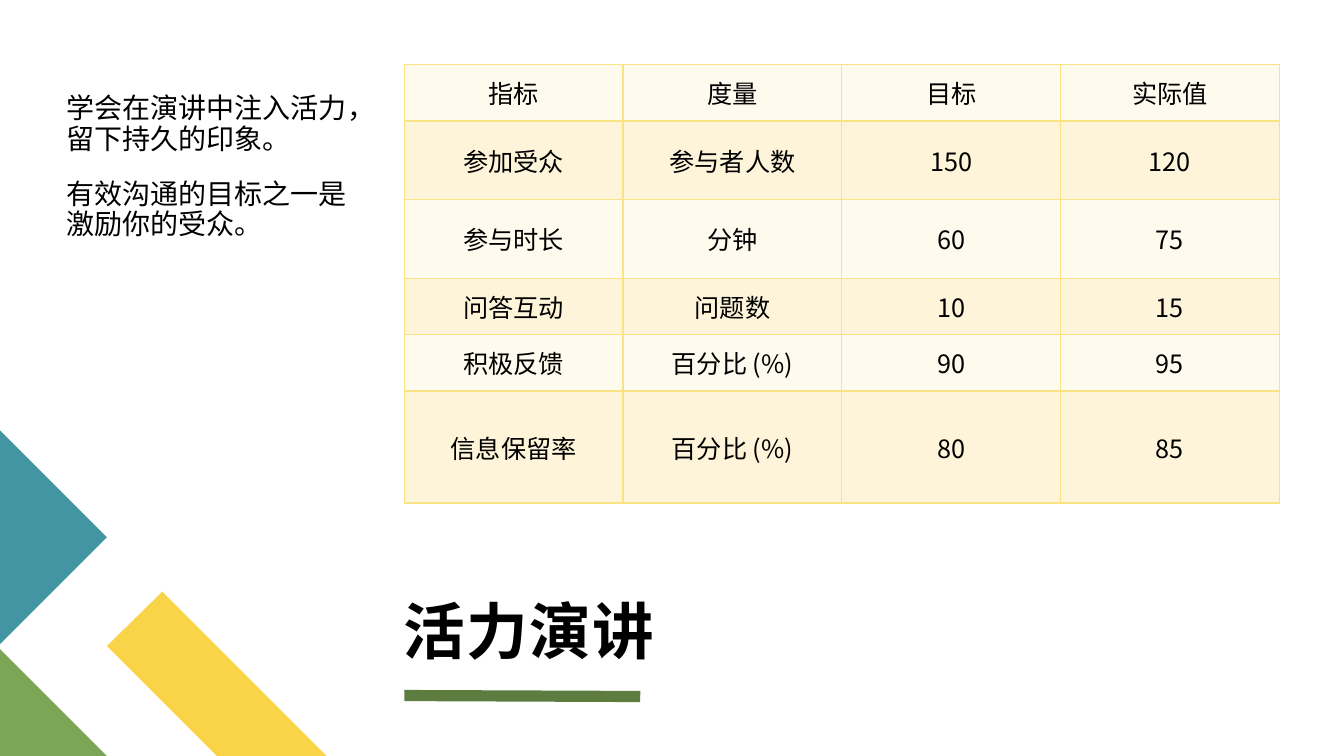
from lxml.etree import SubElement
from pptx import Presentation
from pptx.dml.color import RGBColor
from pptx.enum.shapes import MSO_CONNECTOR
from pptx.enum.text import MSO_ANCHOR as Anchor, PP_ALIGN as Align
from pptx.oxml.ns import qn
from pptx.util import Pt

PX = 9144  # 100 px to the inch
FONT = "Noto Sans CJK SC"

BLACK = RGBColor(0x00, 0x00, 0x00)
YELLOW = RGBColor(0xF9, 0xD4, 0x48)
GREEN = RGBColor(0x7C, 0xA6, 0x55)
TEAL = RGBColor(0x44, 0x95, 0xA2)
DARK_GREEN = RGBColor(0x5D, 0x7D, 0x40)
BORDER = RGBColor(0xFB, 0xE2, 0x84)
BANDS = (RGBColor(0xFE, 0xFA, 0xED), RGBColor(0xFD, 0xF4, 0xD9))

TITLE = "活力演讲"
MESSAGES = ("学会在演讲中注入活力，留下持久的印象。", "有效沟通的目标之一是激励你的受众。")
METRICS = (
    ("指标", "度量", "目标", "实际值"),
    ("参加受众", "参与者人数", "150", "120"),
    ("参与时长", "分钟", "60", "75"),
    ("问答互动", "问题数", "10", "15"),
    ("积极反馈", "百分比 (%)", "90", "95"),
    ("信息保留率", "百分比 (%)", "80", "85"),
)
ROW_HEIGHTS = (56, 78, 78, 56, 56, 111)


def emu(*lengths):
    return [length * PX for length in lengths]


def format_run(run, size, bold=False):
    run.font.name = FONT
    run.font.size = Pt(size)
    run.font.bold = bold
    run.font.color.rgb = BLACK
    SubElement(run._r.get_or_add_rPr(), qn("a:ea"), typeface=FONT)


def add_text_frame(slide, box, margins):
    """Add a wrapping text box; margins are left, top, right, bottom."""
    frame = slide.shapes.add_textbox(*emu(*box)).text_frame
    frame.word_wrap = True
    (frame.margin_left, frame.margin_top,
     frame.margin_right, frame.margin_bottom) = emu(*margins)
    return frame


def add_polygon(slide, points, color):
    builder = slide.shapes.build_freeform(*points[0], scale=PX)
    builder.add_line_segments(points[1:], close=True)
    shape = builder.convert_to_shape()
    shape.shadow.inherit = False
    shape.fill.solid()
    shape.fill.fore_color.rgb = color
    shape.line.fill.background()


def add_corner_decoration(slide, box):
    left, top, width, height = box
    right, bottom = left + width, top + height
    side = 106
    add_polygon(slide, [(right, bottom), (right - 109, bottom),
                        (left + side, bottom - 109), (left + 161, bottom - 163)], YELLOW)
    add_polygon(slide, [(left, bottom - side), (left + side, bottom), (left, bottom)], GREEN)
    add_polygon(slide, [(left, top), (left + side, top + side), (left, top + 2 * side)], TEAL)


def add_title(slide, box):
    left, top, width, height = box
    frame = add_text_frame(slide, box, (0, 0, 0, 0))
    frame.vertical_anchor = Anchor.BOTTOM
    frame.text = TITLE
    paragraph = frame.paragraphs[0]
    paragraph.line_spacing = 0.8
    run = paragraph.runs[0]
    format_run(run, 44, bold=True)
    run._r.get_or_add_rPr().set("spc", "100")

    line_top = top + height + 29
    underline = slide.shapes.add_connector(
        MSO_CONNECTOR.STRAIGHT, *emu(left + 1, line_top, left + 235, line_top + 1))
    underline.line.color.rgb = DARK_GREEN
    underline.line.width = Pt(8)
    SubElement(underline._element.spPr, qn("a:effectLst"))


def add_messages(slide, box):
    frame = add_text_frame(slide, box, (0, 30, 10, 5))
    frame.text = "\n".join(MESSAGES)
    for paragraph in frame.paragraphs:
        paragraph.line_spacing = 0.9
        paragraph.space_before = Pt(18)
        format_run(paragraph.runs[0], 20)


def add_cell_borders(cell):
    properties = cell._tc.get_or_add_tcPr()
    for side in ("lnL", "lnR", "lnT", "lnB"):
        border = SubElement(properties, qn(f"a:{side}"), w=str(Pt(1)))
        fill = SubElement(border, qn("a:solidFill"))
        SubElement(fill, qn("a:srgbClr"), val=str(BORDER))


def add_metrics_table(slide, box):
    table = slide.shapes.add_table(len(METRICS), len(METRICS[0]), *emu(*box)).table
    for row, height in zip(table.rows, ROW_HEIGHTS):
        row.height = height * PX
    for row_index, values in enumerate(METRICS):
        for column_index, value in enumerate(values):
            cell = table.cell(row_index, column_index)
            add_cell_borders(cell)
            cell.fill.solid()
            cell.fill.fore_color.rgb = BANDS[row_index % 2]
            cell.vertical_anchor = Anchor.MIDDLE
            cell.text = value
            paragraph = cell.text_frame.paragraphs[0]
            paragraph.alignment = Align.CENTER
            format_run(paragraph.runs[0], 18)


def main():
    presentation = Presentation()
    presentation.slide_width, presentation.slide_height = emu(1333, 750)
    slide = presentation.slides.add_slide(presentation.slide_layouts[6])
    add_corner_decoration(slide, (0, 427, 324, 323))
    add_title(slide, (400, 510, 868, 151))
    add_messages(slide, (66, 64, 309, 437))
    add_metrics_table(slide, (401, 64, 868, sum(ROW_HEIGHTS)))
    presentation.save("out.pptx")


if __name__ == "__main__":
    main()
